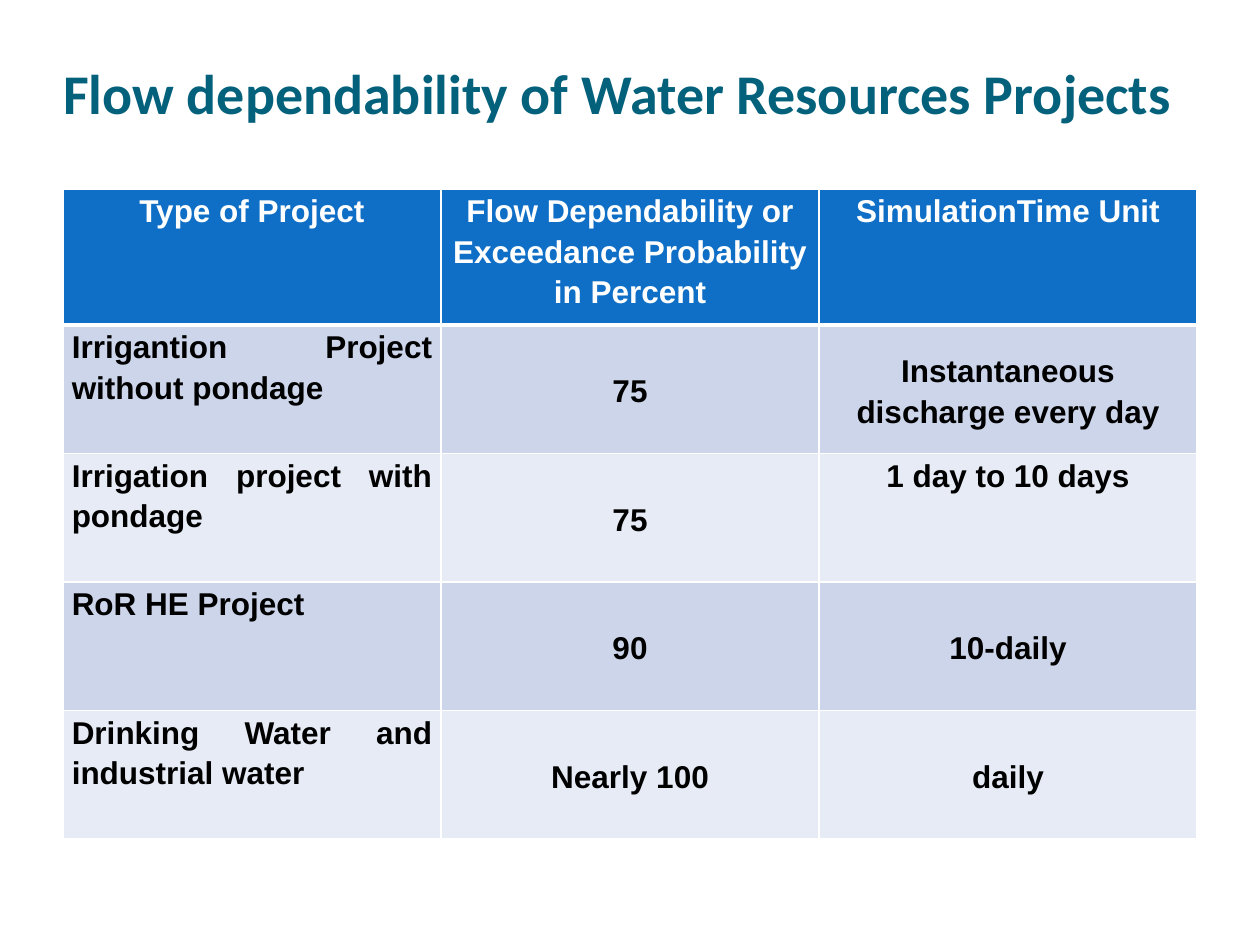
import dataclasses

import pptx
import pptx.dml.color
import pptx.enum.text
import pptx.oxml
import pptx.oxml.ns
import pptx.table
import pptx.util

Inches = pptx.util.Inches
Pt = pptx.util.Pt
Align = pptx.enum.text.PP_ALIGN
Anchor = pptx.enum.text.MSO_ANCHOR

HUES = {
    "title": "04617B",
    "head": "0F6FC6",
    "odd": "CCD5EA",
    "even": "E7EBF5",
    "white": "FFFFFF",
    "black": "000000",
}
INSETS = {
    "margin_left": Inches(0.07),
    "margin_right": Inches(0.07),
    "margin_top": 0,
    "margin_bottom": 0,
}


@dataclasses.dataclass
class Entry:
    text: str
    align: Align = Align.CENTER
    anchor: Anchor = Anchor.MIDDLE


def label(text: str) -> Entry:
    return Entry(text, Align.JUSTIFY, Anchor.TOP)


def top(text: str) -> Entry:
    return Entry(text, anchor=Anchor.TOP)


ROWS = [
    [top("Type of Project"),
     top("Flow Dependability or Exceedance Probability in Percent"),
     top("SimulationTime Unit")],
    [label("Irrigantion Project without pondage "), Entry("75"),
     Entry("Instantaneous discharge every day")],
    [label("Irrigation project with pondage"), Entry("75"),
     top("1 day to 10 days")],
    [label("RoR HE Project"), Entry("90"), Entry("10-daily")],
    [label("Drinking Water and industrial water"), Entry("Nearly 100"),
     Entry("daily")],
]


def apply(item: object, values: dict) -> None:
    for name, value in values.items():
        setattr(item, name, value)


def color(name: str) -> pptx.dml.color.RGBColor:
    return pptx.dml.color.RGBColor.from_string(HUES[name])


def style(font: object, face: str, size: int, hue: str) -> None:
    apply(font, {"name": face, "size": Pt(size), "bold": True})
    font.color.rgb = color(hue)


def border(cell: pptx.table._Cell, side: str, width: int) -> None:
    space = pptx.oxml.ns.nsdecls("a")
    line = pptx.oxml.parse_xml(
        f'<a:ln{side} {space} w="{Pt(width)}"><a:solidFill>'
        f'<a:srgbClr val="{HUES["white"]}"/></a:solidFill></a:ln{side}>')
    cell._tc.get_or_add_tcPr().append(line)


def draw(cell: pptx.table._Cell, entry: Entry, row: int) -> None:
    # Borders come before the fill in the cell properties
    for side in "LRTB":
        heavy = (row, side) in ((0, "B"), (1, "T"))
        border(cell, side, 3 if heavy else 1)
    cell.fill.solid()
    cell.fill.fore_color.rgb = color(
        "head" if row == 0 else "odd" if row % 2 else "even")
    apply(cell, {**INSETS, "vertical_anchor": entry.anchor})
    cell.text = entry.text
    para = cell.text_frame.paragraphs[0]
    apply(para, {"alignment": entry.align, "line_spacing": 1.15})
    style(para.runs[0].font, "Arial", 18, "white" if row == 0 else "black")


def main() -> None:
    deck = pptx.Presentation()
    apply(deck, {"slide_width": Inches(10), "slide_height": Inches(7.5)})
    slide = deck.slides.add_slide(deck.slide_layouts[5])

    # Title
    title = slide.shapes.title
    apply(title, {"left": Inches(0.5), "top": Inches(0.25),
                  "width": Inches(9), "height": Inches(0.75)})
    frame = title.text_frame
    frame.text = "Flow dependability of Water Resources Projects"
    apply(frame, {"margin_left": 0, "margin_right": 0,
                  "margin_top": Inches(0.05), "margin_bottom": 0,
                  "vertical_anchor": Anchor.BOTTOM, "word_wrap": True,
                  "auto_size": pptx.enum.text.MSO_AUTO_SIZE.NONE})
    para = frame.paragraphs[0]
    para.alignment = Align.LEFT
    style(para.runs[0].font, "Calibri", 32, "title")

    # Table
    table = slide.shapes.add_table(
        len(ROWS), len(ROWS[0]), Inches(0.5), Inches(1.5),
        Inches(9), Inches(5.16)).table
    for row, entries in enumerate(ROWS):
        table.rows[row].height = Inches(1.02 if row else 1.08)
        for col, entry in enumerate(entries):
            draw(table.cell(row, col), entry, row)

    deck.save("out.pptx")


if __name__ == "__main__":
    main()
